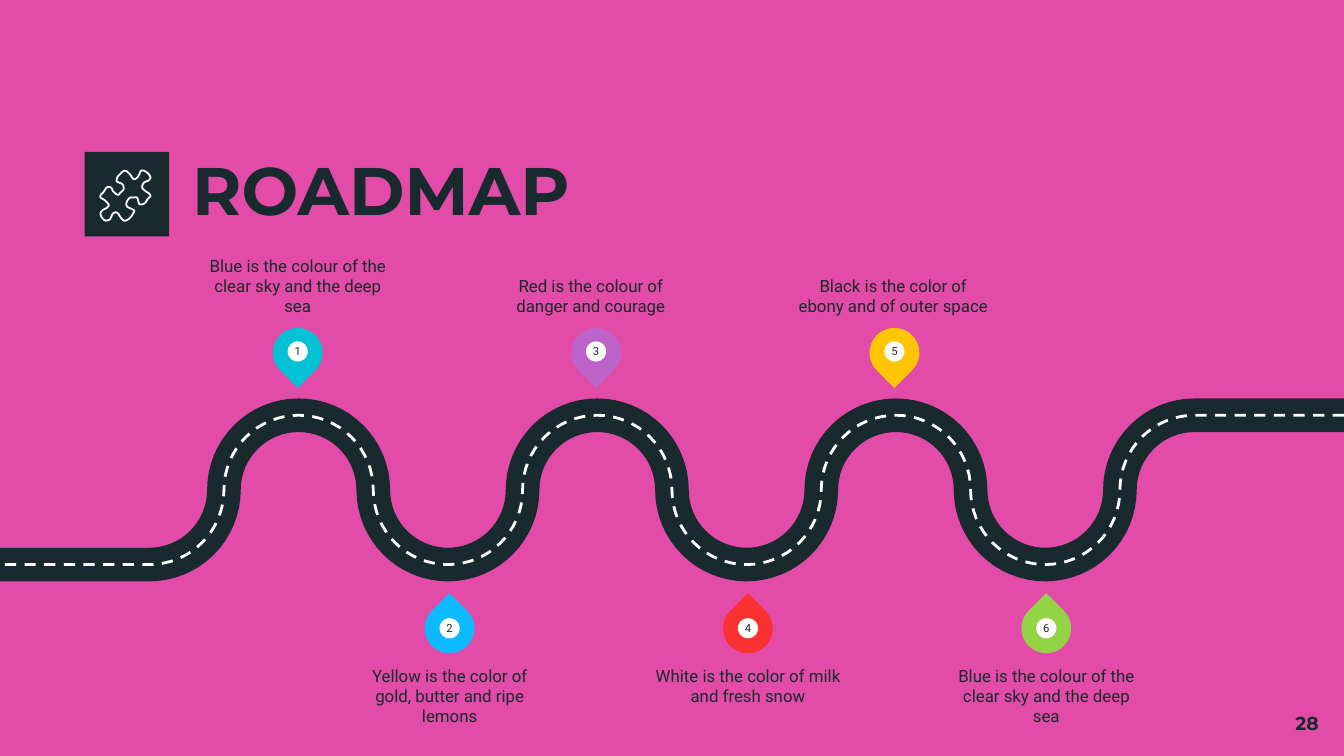
from math import cos, pi, sin

from pptx import Presentation
from pptx.dml.color import RGBColor
from pptx.enum.dml import MSO_LINE
from pptx.enum.shapes import MSO_SHAPE
from pptx.enum.text import MSO_ANCHOR, PP_ALIGN
from pptx.util import Inches, Pt

PINK = RGBColor(0xE3, 0x4B, 0xA8)
DARK = RGBColor(0x18, 0x2A, 0x2E)
WHITE = RGBColor(0xFF, 0xFF, 0xFF)
TEAL = RGBColor(0x00, 0xC2, 0xD4)
PURPLE = RGBColor(0xBB, 0x63, 0xC9)
YELLOW = RGBColor(0xFF, 0xC5, 0x00)
BLUE = RGBColor(0x0D, 0xBA, 0xFF)
RED = RGBColor(0xFA, 0x31, 0x31)
GREEN = RGBColor(0x95, 0xD3, 0x46)

SLIDE_WIDTH = 10
SLIDE_HEIGHT = SLIDE_WIDTH * 9 / 16
PIN_SIZE, DOT_SIZE = 0.37, 0.15
LABEL_WIDTH, LABEL_HEIGHT = 1.41, 0.58
PIN_PITCH = 2.22

UPPER_STOPS = [
    ("1", TEAL, 1.51, "Blue is the colour of the clear sky and the deep sea"),
    ("3", PURPLE, 3.69, "Red is the colour of danger and courage"),
    ("5", YELLOW, 5.94, "Black is the color of ebony and of outer space"),
]
LOWER_STOPS = [
    ("2", BLUE, 2.64, "Yellow is the color of gold, butter and ripe lemons"),
    ("4", RED, 4.86, "White is the color of milk and fresh snow"),
    ("6", GREEN, 7.08, "Blue is the colour of the clear sky and the deep sea"),
]

PUZZLE = [
    (32, 9), (34, 8), (36, 7), (37, 5), (36, 3), (34, 1), (32, 0), (30, 0),
    (29, 2), (28, 4), (26, 6), (24, 6), (22, 3), (20, 1), (18, 0), (16, 1),
    (13, 4), (12, 6), (12, 8), (14, 9), (16, 10), (17, 12), (17, 14), (15, 16),
    (13, 18), (11, 17), (9, 15), (8, 13), (6, 12), (4, 13), (2, 16), (0, 18),
    (0, 20), (3, 22), (5, 24), (6, 26), (4, 28), (2, 29), (0, 31), (0, 33),
    (1, 35), (3, 37), (5, 37), (7, 36), (8, 34), (9, 32), (11, 31), (13, 32),
    (15, 35), (17, 37), (19, 37), (22, 35), (24, 32), (25, 30), (24, 29), (22, 28),
    (20, 27), (19, 25), (20, 22), (22, 20), (24, 20), (27, 20), (28, 23), (29, 25),
    (31, 25), (33, 24), (35, 21), (37, 19), (36, 17), (33, 15), (31, 13), (31, 11),
]


def write_text(shape, text, size, font, align, anchor, bold=False, inset=0, wrap=True):
    frame = shape.text_frame
    frame.text = text
    frame.word_wrap = wrap
    frame.vertical_anchor = anchor
    frame.margin_left = frame.margin_right = Inches(inset)
    frame.margin_top = frame.margin_bottom = Inches(inset)
    para = frame.paragraphs[0]
    para.alignment = align
    span = para.runs[0]
    span.font.size = Pt(size)
    span.font.name = font
    span.font.bold = bold
    span.font.color.rgb = DARK
    return para


def add_text(page, box, *style, **options):
    shape = page.shapes.add_textbox(*map(Inches, box))
    return write_text(shape, *style, **options)


def add_solid(shapes, kind, box, color):
    shape = shapes.add_shape(kind, *map(Inches, box))
    shape.shadow.inherit = False
    shape.fill.solid()
    shape.fill.fore_color.rgb = color
    shape.line.fill.background()
    return shape


def add_outline(page, points, color, width, close=False, dash=None):
    spots = [(Inches(x), Inches(y)) for x, y in points]
    builder = page.shapes.build_freeform(*spots[0], scale=1.0)
    builder.add_line_segments(spots[1:], close=close)
    shape = builder.convert_to_shape()
    shape.shadow.inherit = False
    shape.fill.background()
    shape.line.color.rgb = color
    shape.line.width = Pt(width)
    if dash:
        shape.line.dash_style = dash


def smooth_loop(points, steps=4):
    count = len(points)
    result = []
    for index in range(count):
        corners = [points[(index + shift) % count] for shift in (-1, 0, 1, 2)]
        for step in range(steps):
            t = step / steps
            result.append(tuple(
                b + 0.5 * t * (c - a + t * (2 * a - 5 * b + 4 * c - d + t * (3 * (b - c) + d - a)))
                for a, b, c, d in zip(*corners)
            ))
    return result


def add_heading(page, box):
    left, top, width, height = box
    add_solid(page.shapes, MSO_SHAPE.RECTANGLE, (left, top, height, height), DARK)
    puzzle = [(left + 0.12 + x / 100, top + 0.14 + y / 100) for x, y in smooth_loop(PUZZLE)]
    add_outline(page, puzzle, WHITE, 0.96, close=True)
    para = add_text(page, (left + 0.8, top, width - 0.8, height), "ROADMAP", 36,
                    "Montserrat", PP_ALIGN.LEFT, MSO_ANCHOR.MIDDLE, bold=True)
    para.line_spacing = 0.9


def add_road(page, box, bends=7, steps=16):
    left, top, width, height = box
    radius = height / 2
    middle = top + radius
    points = [(left, top + height)]
    for bend in range(bends):
        start = left + (bend + 1) * height
        side = 1 if bend % 2 == 0 else -1
        angles = [pi / 2 * step / steps for step in range(steps + 1)]
        points += [(start + radius * sin(a), middle + side * radius * cos(a)) for a in angles]
        points += [(start + height - radius * cos(a), middle - side * radius * sin(a))
                   for a in angles[1:]]
    points.append((left + width, top))
    points.reverse()
    add_outline(page, points, DARK, 18)
    add_outline(page, points, WHITE, 1.5, dash=MSO_LINE.DASH)


def add_pin(page, box, dot_drop, number, color, rotation):
    left, top, width, height = box
    group = page.shapes.add_group_shape()
    drop = add_solid(group.shapes, MSO_SHAPE.TEAR, box, color)
    drop.rotation = rotation
    dot_box = (left + (width - DOT_SIZE) / 2, top + dot_drop, DOT_SIZE, DOT_SIZE)
    dot = add_solid(group.shapes, MSO_SHAPE.OVAL, dot_box, WHITE)
    write_text(dot, number, 6, "Roboto", PP_ALIGN.CENTER, MSO_ANCHOR.MIDDLE, wrap=False)


def add_stops(page, stops, pin_left, pin_top, dot_drop, label_top, rotation, anchor):
    for index, (number, color, label_left, text) in enumerate(stops):
        pin_box = (pin_left + index * PIN_PITCH, pin_top, PIN_SIZE, PIN_SIZE)
        add_pin(page, pin_box, dot_drop, number, color, rotation)
        label_box = (label_left, label_top, LABEL_WIDTH, LABEL_HEIGHT)
        add_text(page, label_box, text, 9, "Roboto", PP_ALIGN.CENTER, anchor)


def build_roadmap(deck):
    page = deck.slides.add_slide(deck.slide_layouts[6])
    page.background.fill.solid()
    page.background.fill.fore_color.rgb = PINK
    add_heading(page, (0.63, 1.13, 8.68, 0.63))
    add_road(page, (0, 3.09, SLIDE_WIDTH, SLIDE_WIDTH / 9))
    add_stops(page, UPPER_STOPS, 2.03, 2.44, 0.1, 1.77, 135, MSO_ANCHOR.BOTTOM)
    add_stops(page, LOWER_STOPS, 3.16, 4.49, 0.11, 4.95, 315, MSO_ANCHOR.TOP)
    add_text(page, (9.31, 5.21, 0.6, 0.43), "28", 10, "Montserrat",
             PP_ALIGN.RIGHT, MSO_ANCHOR.TOP, bold=True, inset=0.1)


def main():
    deck = Presentation()
    deck.slide_width = Inches(SLIDE_WIDTH)
    deck.slide_height = Inches(SLIDE_HEIGHT)
    build_roadmap(deck)
    deck.save("out.pptx")


if __name__ == "__main__":
    main()
